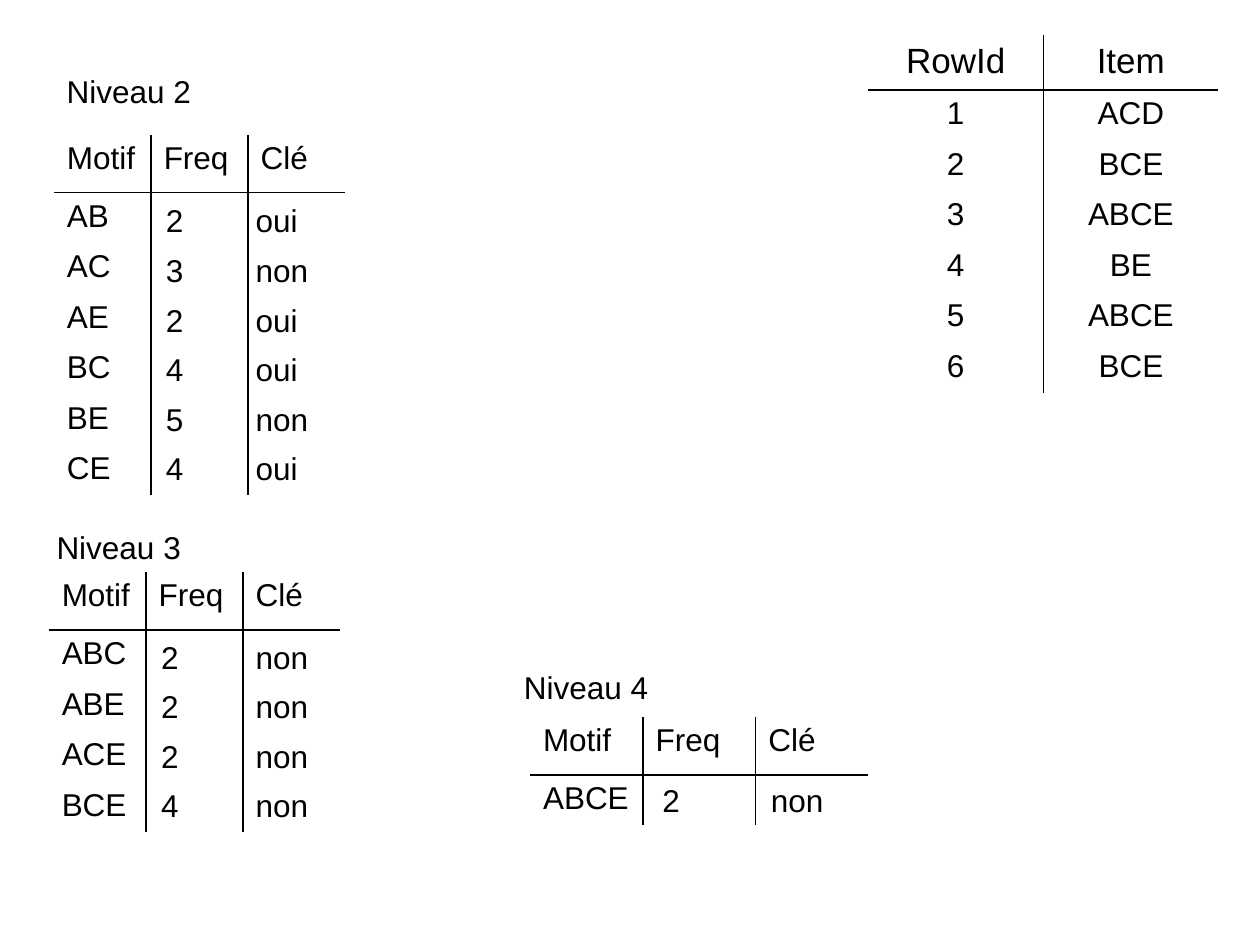
from lxml.etree import SubElement
from pptx import Presentation
from pptx.dml.color import RGBColor
from pptx.enum.text import MSO_AUTO_SIZE, PP_ALIGN
from pptx.oxml.ns import qn
from pptx.util import Pt

COLORS = {"ink": "000000", "paper": "FFFFFF"}
FONT = "Arial"
BODY_SIZE, ROW_HEIGHT, VALUE_PITCH = 18, 28.8, 28.3
LEVEL_HEADER_HEIGHT = 33.1

# Frequencies and keys float over the table, each column at its own left edge.
LEVELS = [
    {"title": "Niveau 2", "title_at": (31, 37.4), "table_at": (31, 77),
     "column_width": 55.4, "values_top": 111.6, "freq_left": 87.8, "key_left": 139,
     "rows": [("AB", "2", "oui"), ("AC", "3", "non"), ("AE", "2", "oui"),
              ("BC", "4", "oui"), ("BE", "5", "non"), ("CE", "4", "oui")]},
    {"title": "Niveau 3", "title_at": (25.2, 298), "table_at": (28.1, 326.9),
     "column_width": 55.4, "values_top": 360.8, "freq_left": 85, "key_left": 139,
     "rows": [("ABC", "2", "non"), ("ABE", "2", "non"),
              ("ACE", "2", "non"), ("BCE", "4", "non")]},
    {"title": "Niveau 4", "title_at": (292.3, 378), "table_at": (303.1, 409.7),
     "column_width": 64.4, "values_top": 442.8, "freq_left": 371.5, "key_left": 433.4,
     "rows": [("ABCE", "2", "non")]},
]
LEVEL_HEADER = ("Motif", "Freq", "Clé")

TRANSACTIONS = [("RowId", "Item"), ("1", "ACD"), ("2", "BCE"), ("3", "ABCE"),
                ("4", "BE"), ("5", "ABCE"), ("6", "BCE")]


def style(paragraph, size=BODY_SIZE, align=PP_ALIGN.LEFT):
    paragraph.alignment = align
    paragraph.font.size = Pt(size)
    paragraph.font.name = FONT
    paragraph.font.color.rgb = RGBColor.from_string(COLORS["ink"])


def add_label(slide, text, left, top, width):
    box = slide.shapes.add_textbox(Pt(left), Pt(top), Pt(width), Pt(ROW_HEIGHT))
    frame = box.text_frame
    frame.word_wrap = True
    frame.auto_size = MSO_AUTO_SIZE.SHAPE_TO_FIT_TEXT
    frame.text = text
    style(frame.paragraphs[0])


def set_borders(cell, shown):
    """Draw the sides named in shown and clear the others; the fill must be set later."""
    properties = cell._tc.get_or_add_tcPr()
    for side in ("L", "R", "T", "B"):
        line = SubElement(properties, qn(f"a:ln{side}"), w=str(Pt(1)))
        if side in shown:
            fill = SubElement(line, qn("a:solidFill"))
            SubElement(fill, qn("a:srgbClr"), val=COLORS["ink"])
        else:
            SubElement(line, qn("a:noFill"))


def add_ruled_table(slide, rows, left, top, column_width, header_height,
                    header_size=BODY_SIZE, align=PP_ALIGN.LEFT):
    """Table with one rule below the header and rules between the columns."""
    row_count, column_count = len(rows), len(rows[0])
    height = header_height + ROW_HEIGHT * (row_count - 1)
    table = slide.shapes.add_table(row_count, column_count, Pt(left), Pt(top),
                                   Pt(column_width * column_count), Pt(height)).table
    table.first_row = table.horz_banding = False
    for column in table.columns:
        column.width = Pt(column_width)
    for r, texts in enumerate(rows):
        table.rows[r].height = Pt(ROW_HEIGHT if r else header_height)
        for c, text in enumerate(texts):
            cell = table.cell(r, c)
            cell.text = text
            cell.margin_top = cell.margin_bottom = Pt(3.6)
            style(cell.text_frame.paragraphs[0], BODY_SIZE if r else header_size, align)
            rules = {"L": c > 0, "R": c < column_count - 1, "T": r == 1, "B": r == 0}
            set_borders(cell, [side for side, drawn in rules.items() if drawn])
            cell.fill.background()


def add_level(slide, level):
    add_label(slide, level["title"], *level["title_at"], 306)
    motifs = [(motif, "", "") for motif, _, _ in level["rows"]]
    add_ruled_table(slide, [LEVEL_HEADER] + motifs, *level["table_at"],
                    level["column_width"], LEVEL_HEADER_HEIGHT)
    for i, (_, freq, key) in enumerate(level["rows"]):
        top = level["values_top"] + i * VALUE_PITCH
        add_label(slide, freq, level["freq_left"], top, 45.4)
        add_label(slide, key, level["key_left"], top, 62.6)


def main():
    deck = Presentation()
    deck.slide_width, deck.slide_height = Pt(720), Pt(540)
    slide = deck.slides.add_slide(deck.slide_layouts[6])
    slide.background.fill.solid()
    slide.background.fill.fore_color.rgb = RGBColor.from_string(COLORS["paper"])
    for level in LEVELS:
        add_level(slide, level)
    add_ruled_table(slide, TRANSACTIONS, 496.1, 20.2, 100.1, 31,
                    header_size=20, align=PP_ALIGN.CENTER)
    deck.save("out.pptx")


if __name__ == "__main__":
    main()
